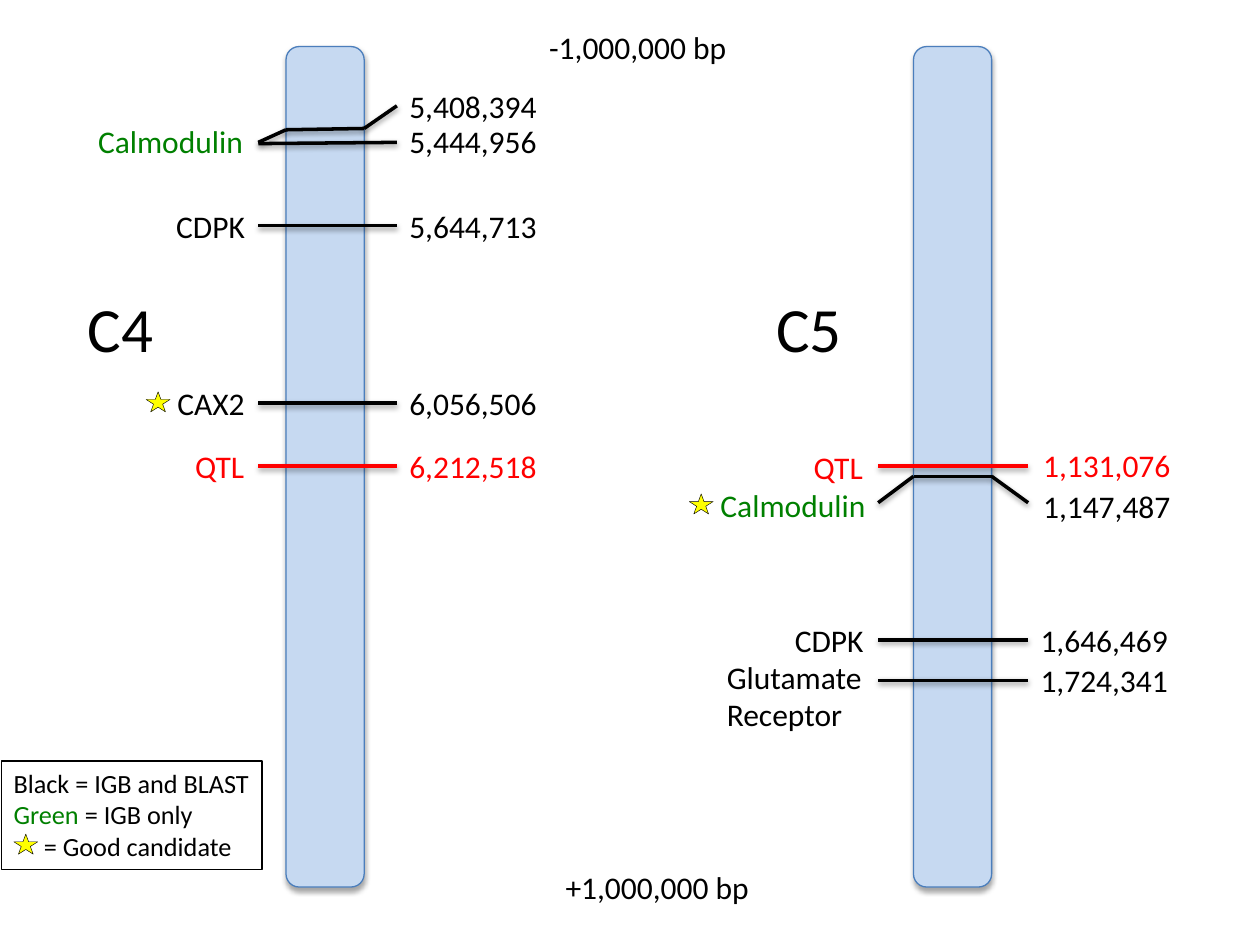
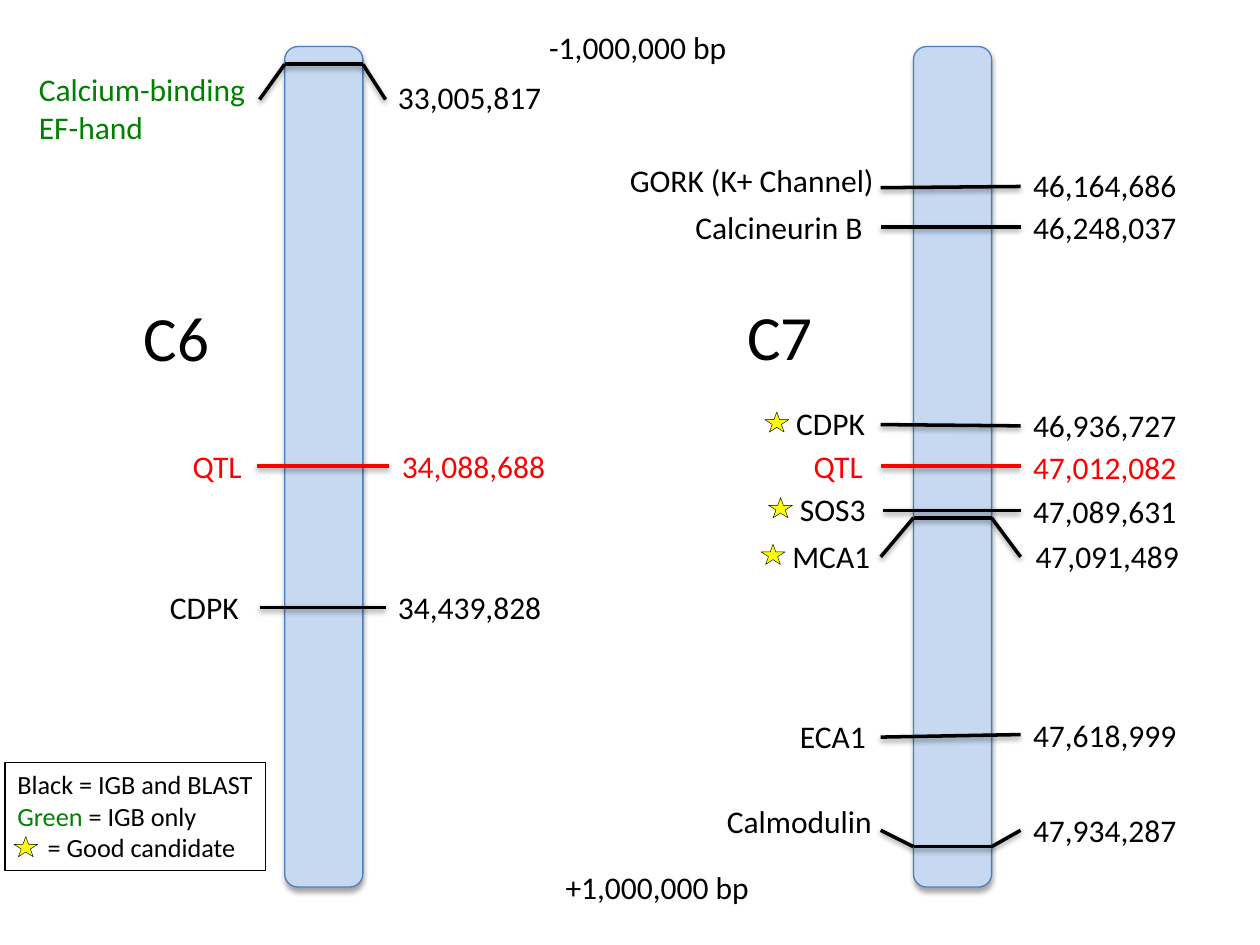
from dataclasses import dataclass

import pptx
import pptx.dml.color
import pptx.enum.shapes
import pptx.enum.text
import pptx.util
from lxml import etree
from pptx.oxml.ns import qn

Inches, Pt = pptx.util.Inches, pptx.util.Pt
SHAPE = pptx.enum.shapes.MSO_SHAPE

COLOURS = {"black": "000000", "red": "FF0000", "green": "008000",
           "bar": "C6D9F1", "bar edge": "4B7EBC", "star": "FFFF00"}
FONT = "Calibri"
BAR_TOP, BAR_WIDTH, BAR_HEIGHT = 0.37, 0.62, 6.67
STAR_WIDTH, STAR_HEIGHT = 0.19, 0.16
STAR_OFFSET = (-0.15, 0.11)  # from the corner of the gene's text


@dataclass
class Marker:
    """A gene at a locus. Heights run left to right: two for a straight tick,
    four for one that bends at both edges of the bar."""
    gene: str
    gene_box: tuple  # left, top, width
    locus: str
    locus_top: float
    heights: tuple
    colour: str = "black"
    star: bool = False
    wrap: bool = False
    ticks: tuple = ()  # left and right end, if unlike the chromosome's
    locus_shift: float = 0


@dataclass
class Chromosome:
    name: str
    name_box: tuple
    bar_left: float
    ticks: tuple
    markers: list


C4 = Chromosome("C4", (0.46, 2.25, 0.99), 2.27, (2.05, 3.15), [
    Marker("", (), "5,408,394", 0.64, (1.13, 1.03, 1.02, 0.84)),
    Marker("Calmodulin", (0.68, 0.92, 1.36), "5,444,956", 0.92, (1.14, 1.13), "green"),
    Marker("CDPK", (1.3, 1.59, 0.75), "5,644,713", 1.59, (1.79, 1.79)),
    Marker("CAX2", (1.31, 3, 0.74), "6,056,506", 3, (3.2, 3.2), star=True),
    Marker("QTL", (1.45, 3.5, 0.61), "6,212,518", 3.5, (3.7, 3.7), "red"),
])
C5 = Chromosome("C5", (5.81, 2.25, 1.22), 7.25, (6.97, 8.16), [
    Marker("QTL", (6.36, 3.51, 0.61), "1,131,076", 3.49, (3.7, 3.7), "red",
           locus_shift=0.02),
    Marker("Calmodulin", (5.62, 3.81, 1.36), "1,147,487", 3.82,
           (3.99, 3.78, 3.78, 3.99), "green", star=True, locus_shift=0.02),
    Marker("CDPK", (6.21, 4.88, 0.75), "1,646,469", 4.88, (5.08, 5.08)),
    Marker("Glutamate\nReceptor", (5.67, 5.17, 1.28), "1,724,341", 5.2, (5.4, 5.4)),
])
C6 = Chromosome("C6", (0.75, 2.32, 1.3), 2.26, (2.06, 3.06), [
    Marker("Calcium-binding EF-hand", (0.21, 0.51, 1.98), "33,005,817", 0.57,
           (0.79, 0.51, 0.51, 0.79), "green", wrap=True),
    Marker("QTL", (1.43, 3.5, 0.61), "34,088,688", 3.5, (3.7, 3.7), "red",
           ticks=(2.04, 3.09)),
    Marker("CDPK", (1.25, 4.62, 0.75), "34,439,828", 4.62, (4.82, 4.82)),
])
C7 = Chromosome("C7", (5.74, 2.31, 0.9), 7.25, (6.99, 8.1), [
    Marker("GORK (K+ Channel)", (4.9, 1.23, 2.16), "46,164,686", 1.27, (1.49, 1.48)),
    Marker("Calcineurin B", (5.42, 1.6, 1.55), "46,248,037", 1.6, (1.8, 1.8)),
    Marker("CDPK", (6.22, 3.16, 0.75), "46,936,727", 3.17, (3.37, 3.38), star=True),
    Marker("QTL", (6.36, 3.5, 0.61), "47,012,082", 3.51, (3.7, 3.7), "red"),
    Marker("SOS3", (6.25, 3.84, 0.76), "47,089,631", 3.86, (4.05, 4.05), star=True,
           ticks=(7.01, 8.1)),
    Marker("MCA1", (6.19, 4.21, 0.83), "47,091,489", 4.21,
           (4.42, 4.11, 4.11, 4.42), star=True, locus_shift=0.02),
    Marker("ECA1", (6.25, 5.64, 0.73), "47,618,999", 5.63, (5.85, 5.83)),
    Marker("Calmodulin", (5.67, 6.32, 1.39), "47,934,287", 6.39,
           (6.59, 6.72, 6.72, 6.59)),
])
# Chromosomes, corner of the legend, corner of its star
SLIDES = [((C4, C5), (0.01, 6.04), (0.11, 6.62)),
          ((C6, C7), (0.04, 6.05), (0.11, 6.64))]
RANGE_ENDS = [("-1,000,000 bp", (4.26, 0.17, 1.67)),
              ("+1,000,000 bp", (4.39, 6.84, 1.67))]
LEGEND = [[("Black = IGB and BLAST", "black")],
          [("Green", "green"), (" = IGB only", "black")],
          [("= Good candidate", "black")]]
LEGEND_SIZE, LEGEND_INDENT = (2.07, 0.86), 0.24


def rgb(colour):
    return pptx.dml.color.RGBColor.from_string(COLOURS[colour])


def set_line(line, colour, width):
    line.color.rgb = rgb(colour)
    line.width = Pt(width)


def cast_shadow(shape, distance, opacity):
    """Add a soft shadow that falls straight down; call after the line is set."""
    effects = etree.SubElement(shape._element.spPr, qn("a:effectLst"))
    shadow = etree.SubElement(effects, qn("a:outerShdw"), blurRad=str(Pt(3.1)),
                              dist=str(Pt(distance)), dir="5400000", rotWithShape="0")
    black = etree.SubElement(shadow, qn("a:srgbClr"), val=COLOURS["black"])
    etree.SubElement(black, qn("a:alpha"), val=str(opacity * 1000))


def add_preset(slide, kind, box, fill, edge, edge_width):
    shape = slide.shapes.add_shape(kind, *map(Inches, box))
    shape.fill.solid()
    shape.fill.fore_color.rgb = rgb(fill)
    set_line(shape.line, edge, edge_width)
    return shape


def add_star(slide, left, top):
    star = add_preset(slide, SHAPE.STAR_5_POINT, (left, top, STAR_WIDTH, STAR_HEIGHT),
                      "star", "black", 0.25)
    star.shadow.inherit = False


def add_label(slide, text, box, colour="black", size=18, wrap=False, centred=False):
    left, top, width = box
    height = 0.71 if size > 18 or wrap or "\n" in text else 0.4
    label = slide.shapes.add_textbox(*map(Inches, (left, top, width, height)))
    frame = label.text_frame
    frame.text = text
    frame.word_wrap = wrap
    frame.auto_size = pptx.enum.text.MSO_AUTO_SIZE.SHAPE_TO_FIT_TEXT
    for paragraph in frame.paragraphs:
        paragraph.font.name, paragraph.font.size = FONT, Pt(size)
        paragraph.font.color.rgb = rgb(colour)
        if centred:
            paragraph.alignment = pptx.enum.text.PP_ALIGN.CENTER


def add_marker(slide, marker, chromosome):
    left, right = marker.ticks or chromosome.ticks
    bar_left = chromosome.bar_left
    bends = [bar_left, bar_left + BAR_WIDTH] if len(marker.heights) == 4 else []
    points = list(zip([left, *bends, right], marker.heights))
    for start, end in zip(points, points[1:]):
        tick = slide.shapes.add_connector(pptx.enum.shapes.MSO_CONNECTOR.STRAIGHT,
                                          *map(Inches, start + end))
        set_line(tick.line, "red" if marker.colour == "red" else "black", 2)
        cast_shadow(tick, 1.6, 38)
    if marker.gene:
        add_label(slide, marker.gene, marker.gene_box, marker.colour, wrap=marker.wrap)
    locus_width = 1.22 if len(marker.locus) == 9 else 1.35
    add_label(slide, marker.locus,
              (right + marker.locus_shift, marker.locus_top, locus_width),
              "red" if marker.colour == "red" else "black")
    if marker.star:
        gene_left, gene_top, _ = marker.gene_box
        add_star(slide, gene_left + STAR_OFFSET[0], gene_top + STAR_OFFSET[1])


def add_chromosome(slide, chromosome):
    bar = add_preset(slide, SHAPE.ROUNDED_RECTANGLE,
                     (chromosome.bar_left, BAR_TOP, BAR_WIDTH, BAR_HEIGHT),
                     "bar", "bar edge", 0.75)
    cast_shadow(bar, 1.8, 35)
    add_label(slide, chromosome.name, chromosome.name_box, size=36, wrap=True,
              centred=True)
    for marker in chromosome.markers:
        add_marker(slide, marker, chromosome)


def add_legend(slide, corner, star_corner):
    legend = slide.shapes.add_textbox(*map(Inches, corner + LEGEND_SIZE))
    set_line(legend.line, "black", 0.75)
    frame = legend.text_frame
    frame.word_wrap = True
    for index, entry in enumerate(LEGEND):
        paragraph = frame.add_paragraph() if index else frame.paragraphs[0]
        paragraph.font.name, paragraph.font.size = FONT, Pt(15)
        for text, colour in entry:
            run = paragraph.add_run()
            run.text = text
            run.font.color.rgb = rgb(colour)
    # The last line leaves room for the star
    paragraph._p.get_or_add_pPr().set("marL", str(Inches(LEGEND_INDENT)))
    add_star(slide, *star_corner)


def main():
    deck = pptx.Presentation()
    deck.slide_width, deck.slide_height = Inches(10), Inches(7.5)
    blank = deck.slide_layouts[6]
    for chromosomes, legend_corner, star_corner in SLIDES:
        slide = deck.slides.add_slide(blank)
        for chromosome in chromosomes:
            add_chromosome(slide, chromosome)
        for text, box in RANGE_ENDS:
            add_label(slide, text, box)
        add_legend(slide, legend_corner, star_corner)
    deck.save("out.pptx")


if __name__ == "__main__":
    main()
